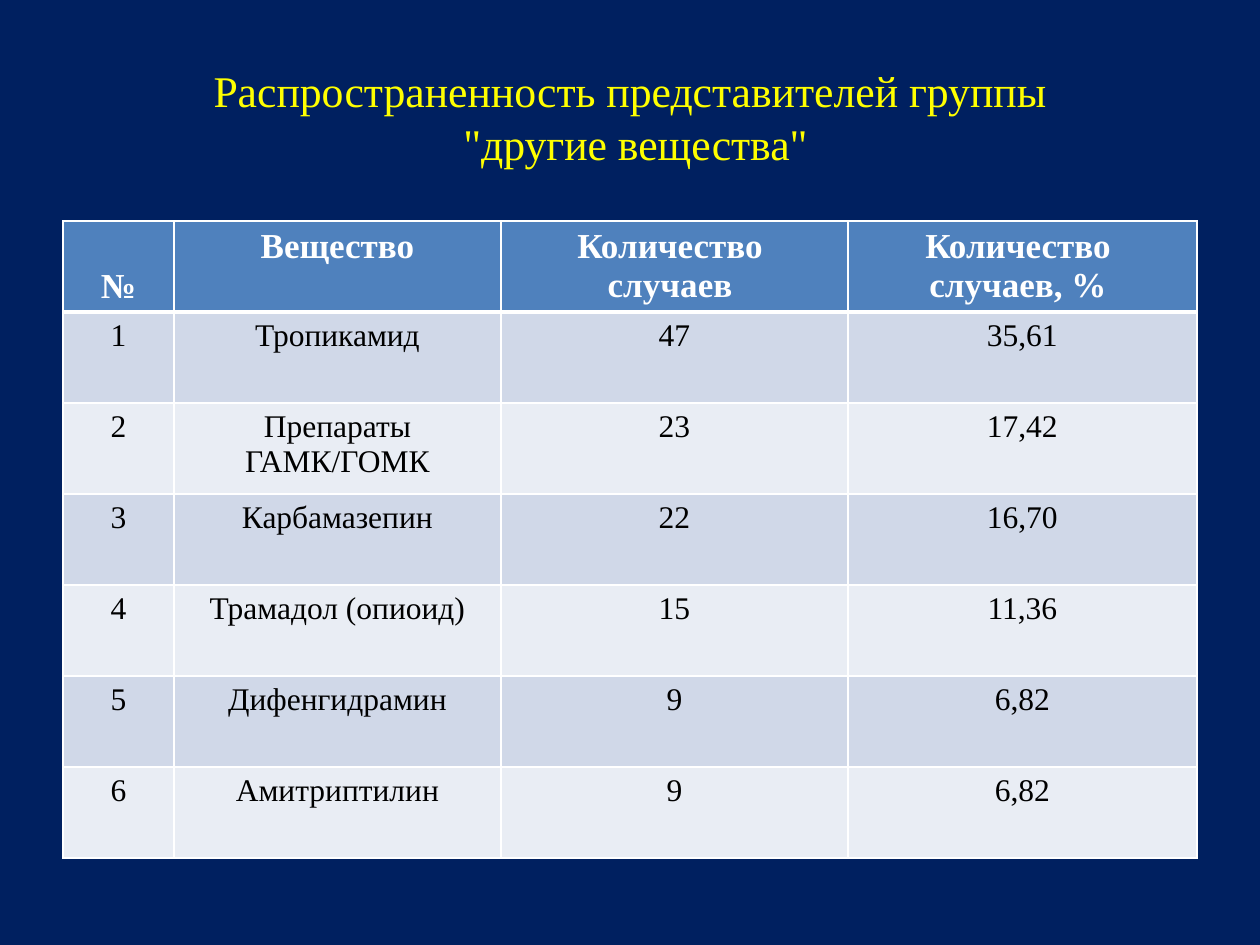
from lxml import etree
from pptx import Presentation
from pptx.dml.color import RGBColor
from pptx.enum.text import MSO_ANCHOR, PP_ALIGN
from pptx.oxml.ns import qn
from pptx.util import Pt

PX = 914400 // 126
CENTER = PP_ALIGN.CENTER
TOP, MIDDLE, BOTTOM = MSO_ANCHOR.TOP, MSO_ANCHOR.MIDDLE, MSO_ANCHOR.BOTTOM
FONT = "Times New Roman"
NAVY = RGBColor(0x00, 0x20, 0x60)
YELLOW = RGBColor(0xFF, 0xFF, 0x00)
WHITE = RGBColor(0xFF, 0xFF, 0xFF)
BLACK = RGBColor(0x00, 0x00, 0x00)
BLUE = RGBColor(0x4F, 0x81, 0xBD)
BANDS = RGBColor(0xD0, 0xD8, 0xE8), RGBColor(0xE9, 0xED, 0xF4)

TITLE = "Распространенность представителей группы\v \"другие вещества\""
HEADERS = ["№", "Вещество", "Количество \nслучаев ", "Количество \nслучаев, % "]
SUBSTANCES = [
    ("Тропикамид", "47", "35,61"),
    ("Препараты ГАМК/ГОМК", "23", "17,42"),
    ("Карбамазепин", "22", "16,70"),
    ("Трамадол (опиоид)", "15", "11,36"),
    ("Дифенгидрамин", "9", "6,82"),
    ("Амитриптилин", "9", "6,82"),
]
COLUMN_WIDTHS = [111, 327, 347, 349]
ROW_HEIGHT = 91


def write(tf, text, size, color, bold=False):
    tf.text = text
    for p in tf.paragraphs:
        p.alignment = CENTER
        for r in p.runs:
            r.font.name = FONT
            r.font.size = Pt(size)
            r.font.bold = bold
            r.font.color.rgb = color


def set_borders(cell, bottom=1, top=1):
    """Draw white cell borders, with widths in points."""
    tc_pr = cell._tc.get_or_add_tcPr()
    sides = {"lnL": 1, "lnR": 1, "lnT": top, "lnB": bottom}
    for i, (side, width) in enumerate(sides.items()):
        ln = etree.Element(qn(f"a:{side}"), w=str(Pt(width)))
        fill = etree.SubElement(ln, qn("a:solidFill"))
        etree.SubElement(fill, qn("a:srgbClr"), val=str(WHITE))
        tc_pr.insert(i, ln)


def add_title(s, x, y, w, h):
    title = s.shapes.title
    title.left, title.top, title.width, title.height = (v * PX for v in (x, y, w, h))
    title.text_frame.vertical_anchor = MIDDLE
    title.text_frame.word_wrap = True
    write(title.text_frame, TITLE, 25, YELLOW)


def add_substance_table(s, x, y):
    rows = [HEADERS] + [(str(n), *row) for n, row in enumerate(SUBSTANCES, 1)]
    table = s.shapes.add_table(
        len(rows), len(HEADERS), x * PX, y * PX,
        sum(COLUMN_WIDTHS) * PX, len(rows) * ROW_HEIGHT * PX).table
    for column, width in zip(table.columns, COLUMN_WIDTHS):
        column.width = width * PX
    for i, values in enumerate(rows):
        table.rows[i].height = ROW_HEIGHT * PX
        header = i == 0
        for j, text in enumerate(values):
            cell = table.cell(i, j)
            cell.fill.solid()
            cell.fill.fore_color.rgb = BLUE if header else BANDS[(i - 1) % 2]
            cell.vertical_anchor = BOTTOM if header and j == 0 else TOP
            write(cell.text_frame, text, 20 if header else 18,
                  WHITE if header else BLACK, bold=header)
            set_borders(cell, bottom=3 if header else 1, top=3 if i == 1 else 1)


def main():
    prs = Presentation()
    prs.slide_width, prs.slide_height = 1260 * PX, 945 * PX
    s = prs.slides.add_slide(prs.slide_layouts[5])
    s.background.fill.solid()
    s.background.fill.fore_color.rgb = NAVY
    add_title(s, 63, 38, 1134, 157)
    add_substance_table(s, 63, 221)
    prs.save("out.pptx")


if __name__ == "__main__":
    main()
